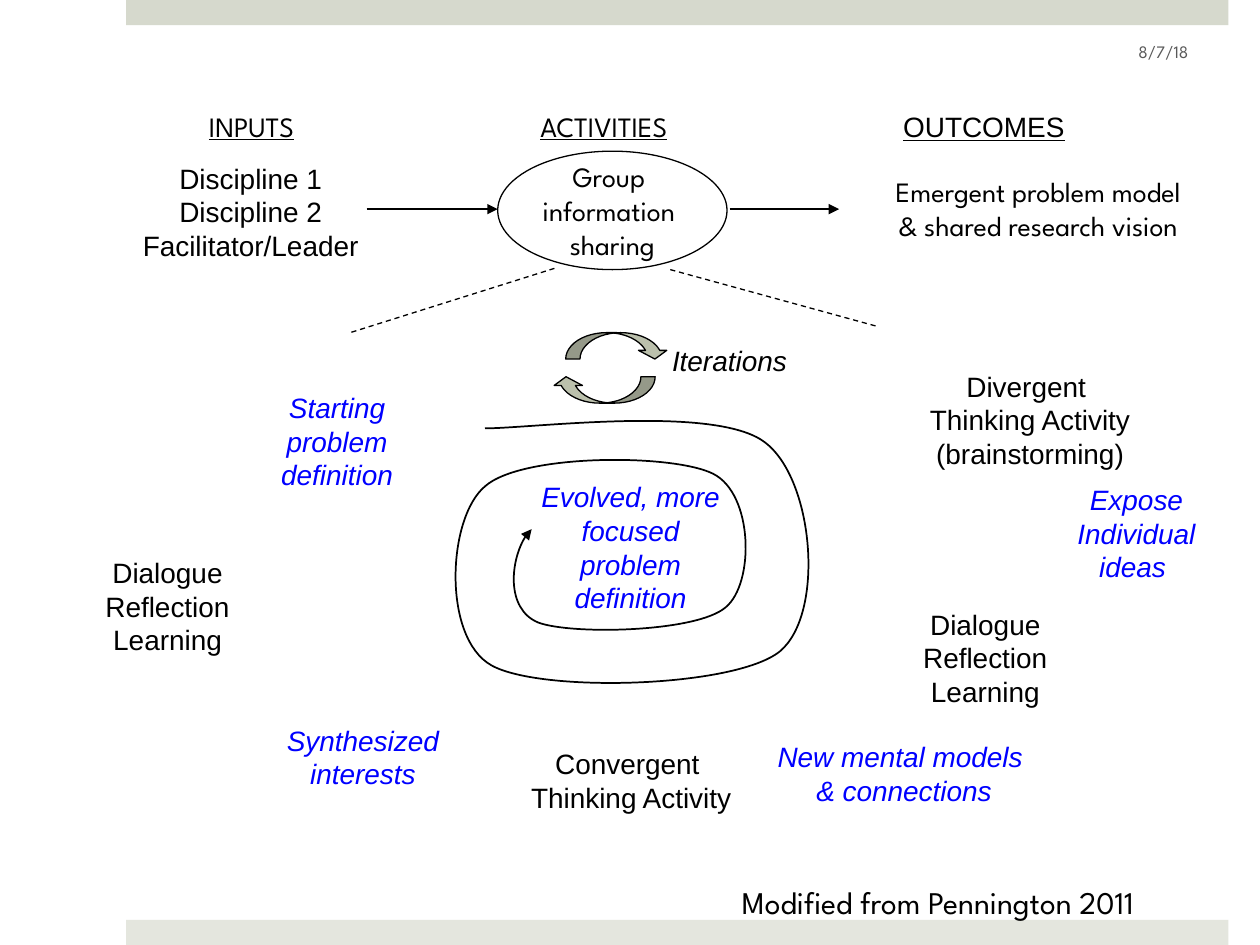
from dataclasses import dataclass

import pptx
import pptx.dml.color
import pptx.enum.dml
import pptx.enum.shapes
import pptx.enum.text
import pptx.oxml
import pptx.oxml.ns
import pptx.util

RGBColor = pptx.dml.color.RGBColor
BLACK = RGBColor(0x00, 0x00, 0x00)
BLUE = RGBColor(0x00, 0x00, 0xFF)
GRAY = RGBColor(0x59, 0x59, 0x59)
SAGE = RGBColor(0xBB, 0xC0, 0xAC)
TOP_BAND = RGBColor(0xD6, 0xD9, 0xCD)
BOTTOM_BAND = RGBColor(0xE4, 0xE6, 0xDE)

SANS = "Arial"
GEOMETRIC = "League Spartan"
LINE_HEIGHT = 1.2  # share of the text size

LEFT = pptx.enum.text.PP_ALIGN.LEFT
CENTER = pptx.enum.text.PP_ALIGN.CENTER
RIGHT = pptx.enum.text.PP_ALIGN.RIGHT
MIDDLE = pptx.enum.text.MSO_ANCHOR.MIDDLE
SHAPES = pptx.enum.shapes.MSO_SHAPE

# The slide is a grid of 100 columns and 75 rows
WIDTH, HEIGHT = pptx.util.Inches(10), pptx.util.Inches(7.5)
COLUMNS, ROWS = 100, 75


def column(position: float) -> int:
    return round(WIDTH * position / COLUMNS)


def row(position: float) -> int:
    return round(HEIGHT * position / ROWS)


@dataclass(frozen=True)
class Box:
    left: float
    top: float
    width: float
    height: float

    def place(self) -> tuple[int, int, int, int]:
        return column(self.left), row(self.top), column(self.width), row(self.height)


@dataclass(frozen=True)
class Label:
    box: Box
    lines: tuple[str, ...]
    font: str = SANS
    color: RGBColor = BLACK
    size: int = 16
    align: int = CENTER
    italic: bool = False
    underline: bool = False
    wrap: bool = True


@dataclass(frozen=True)
class Link:
    start: tuple[float, float]
    end: tuple[float, float]
    dashed: bool = False


@dataclass(frozen=True)
class CycleArrow:
    preset: int
    box: Box
    flips: tuple[str, ...]


def heading(left: float, width: float, text: str, font: str) -> Label:
    return Label(Box(left, 8.2, width, 3.7), (text,), font,
                 align=LEFT, underline=True, wrap=False)


def idea(box: Box, *lines: str, wrap: bool = True) -> Label:
    return Label(box, lines, color=BLUE, italic=True, wrap=wrap)


DIALOGUE = ("Dialogue", "Reflection", "Learning")
LABELS = (
    # Flow from inputs to outcomes
    heading(15.6, 9.1, "INPUTS", GEOMETRIC),
    heading(41.9, 12.8, "ACTIVITIES", GEOMETRIC),
    heading(70.7, 15, "OUTCOMES", SANS),
    Label(Box(9.4, 12.3, 21, 9.1),
          ("Discipline 1", "Discipline 2", "Facilitator/Leader")),
    Label(Box(67.5, 13.4, 29.8, 6.4),
          ("Emergent problem model", "& shared research vision"), GEOMETRIC),
    # Activities around the spiral
    Label(Box(50.1, 26.8, 15.6, 3.7), ("Iterations",), italic=True),
    Label(Box(70.7, 28.8, 22.1, 9.1),
          ("Divergent ", "Thinking Activity", "(brainstorming)")),
    Label(Box(72.2, 47.7, 12, 9.1), DIALOGUE, wrap=False),
    Label(Box(40.3, 58.8, 19.6, 6.4), ("Convergent ", "Thinking Activity")),
    Label(Box(7.3, 43.6, 12, 9.1), DIALOGUE, wrap=False),
    # Results of the activities
    idea(Box(17.3, 30.5, 18.9, 9.1), "Starting", "problem", "definition"),
    idea(Box(84.2, 37.8, 12, 9.1), "Expose", "Individual", "ideas ", wrap=False),
    idea(Box(59.9, 58.2, 23.7, 6.4), "New mental models ", "& connections"),
    idea(Box(21.4, 56.9, 14.8, 6.4), "Synthesized", "interests", wrap=False),
    idea(Box(41.2, 37.6, 17.7, 11.8), "Evolved, more focused problem definition"),
    # Credit
    Label(Box(57.9, 69.6, 40.2, 4), ("Modified from Pennington 2011",), GEOMETRIC,
          size=18, align=LEFT, wrap=False),
)
DATE = Label(Box(72, 2.1, 23.3, 4), ("8/7/18",), GEOMETRIC, GRAY, 10, RIGHT)
GROUP = Label(Box(39.5, 12, 18.2, 9.4),
              ("Group ", "information ", "sharing"), GEOMETRIC, wrap=False)
LINKS = (
    Link((29.1, 16.6), (39.5, 16.6)),
    Link((57.9, 16.6), (66.6, 16.6)),
    Link((44, 21.3), (27.8, 26.4), dashed=True),
    Link((53.2, 21.4), (69.6, 25.9), dashed=True),
)
CYCLE = (
    CycleArrow(SHAPES.CURVED_UP_ARROW, Box(44.9, 26.4, 8.2, 2.1), ("flipV",)),
    CycleArrow(SHAPES.CURVED_DOWN_ARROW, Box(43.8, 29.9, 8.2, 2.1), ("flipH", "flipV")),
)
# Start of the spiral, then two handles and an end for each curve
SPIRAL = (
    (38.5, 34),
    (42.2, 34), (56.8, 32.1), (60.7, 35.1),
    (64.6, 38), (65.5, 48.7), (61.9, 51.7),
    (58.3, 54.6), (42.9, 55), (39, 52.8),
    (35.1, 50.6), (35.5, 41.1), (38.5, 38.6),
    (41.4, 36), (53.4, 36), (56.6, 37.6),
    (59.8, 39.2), (59.9, 46.3), (57.6, 48.2),
    (55.3, 50.2), (45.3, 50.4), (42.7, 49.4),
    (40.1, 48.3), (40.6, 43.4), (42.2, 42),
)


def set_outline(shape, width: float) -> None:
    shape.line.color.rgb = BLACK
    shape.line.width = pptx.util.Pt(width)


def add_arrowhead(shape) -> None:
    line = shape.line._get_or_add_ln()
    line.append(pptx.oxml.parse_xml(
        f'<a:tailEnd {pptx.oxml.ns.nsdecls("a")} type="triangle"/>'))


def write_text(shape, label: Label) -> None:
    frame = shape.text_frame
    frame.word_wrap = label.wrap
    frame.text = "\n".join(label.lines)
    for paragraph in frame.paragraphs:
        paragraph.alignment = label.align
        paragraph.line_spacing = pptx.util.Pt(label.size * LINE_HEIGHT)
        font = paragraph.font
        font.name, font.size = label.font, pptx.util.Pt(label.size)
        font.color.rgb = label.color
        font.italic, font.underline = label.italic, label.underline


def add_label(slide, label: Label):
    shape = slide.shapes.add_textbox(*label.box.place())
    write_text(shape, label)
    return shape


def add_preset(slide, preset: int, box: Box, fill: RGBColor | None):
    shape = slide.shapes.add_shape(preset, *box.place())
    shape.shadow.inherit = False
    if fill is None:
        shape.fill.background()
    else:
        shape.fill.solid()
        shape.fill.fore_color.rgb = fill
    shape.line.fill.background()
    return shape


def add_link(slide, link: Link) -> None:
    (x1, y1), (x2, y2) = link.start, link.end
    connector = slide.shapes.add_connector(
        pptx.enum.shapes.MSO_CONNECTOR.STRAIGHT, column(x1), row(y1), column(x2), row(y2))
    set_outline(connector, 0.75)
    if link.dashed:
        connector.line.dash_style = pptx.enum.dml.MSO_LINE.DASH
    else:
        add_arrowhead(connector)
    connector.element.spPr.append(pptx.oxml.parse_xml(
        f'<a:effectLst {pptx.oxml.ns.nsdecls("a")}/>'))


def add_cycle_arrow(slide, arrow: CycleArrow) -> None:
    shape = add_preset(slide, arrow.preset, arrow.box, SAGE)
    set_outline(shape, 0.75)
    for index, value in enumerate((0.54, 1.07, 0.33)):
        shape.adjustments[index] = value
    for flip in arrow.flips:
        shape.element.spPr.get_or_add_xfrm().set(flip, "1")


def add_spiral(slide) -> None:
    start, *points = [(column(x), row(y)) for x, y in SPIRAL]
    builder = slide.shapes.build_freeform(*start)
    builder.add_line_segments(points, close=False)
    shape = builder.convert_to_shape()
    # Each three segments become one Bezier curve
    qn = pptx.oxml.ns.qn
    segments = list(shape.element.iter(qn("a:lnTo")))
    for first in range(0, len(segments), 3):
        curve = segments[first]
        curve.tag = qn("a:cubicBezTo")
        for segment in segments[first + 1:first + 3]:
            curve.append(segment[0])
            segment.getparent().remove(segment)
    shape.shadow.inherit = False
    shape.fill.background()
    set_outline(shape, 1)
    add_arrowhead(shape)


def main() -> None:
    presentation = pptx.Presentation()
    presentation.slide_width, presentation.slide_height = WIDTH, HEIGHT
    slide = presentation.slides.add_slide(presentation.slide_layouts[6])

    # Bands and date
    add_preset(slide, SHAPES.RECTANGLE, Box(10, 0, 87.5, 2), TOP_BAND)
    add_preset(slide, SHAPES.RECTANGLE, Box(10, 73, 87.5, 2), BOTTOM_BAND)
    add_label(slide, DATE).text_frame.vertical_anchor = MIDDLE

    # Diagram
    for link in LINKS:
        add_link(slide, link)
    for arrow in CYCLE:
        add_cycle_arrow(slide, arrow)
    ellipse = add_preset(slide, SHAPES.OVAL, GROUP.box, None)
    set_outline(ellipse, 0.75)
    write_text(ellipse, GROUP)
    ellipse.text_frame.vertical_anchor = MIDDLE
    add_spiral(slide)
    for label in LABELS:
        add_label(slide, label)

    presentation.save("out.pptx")


if __name__ == "__main__":
    main()
